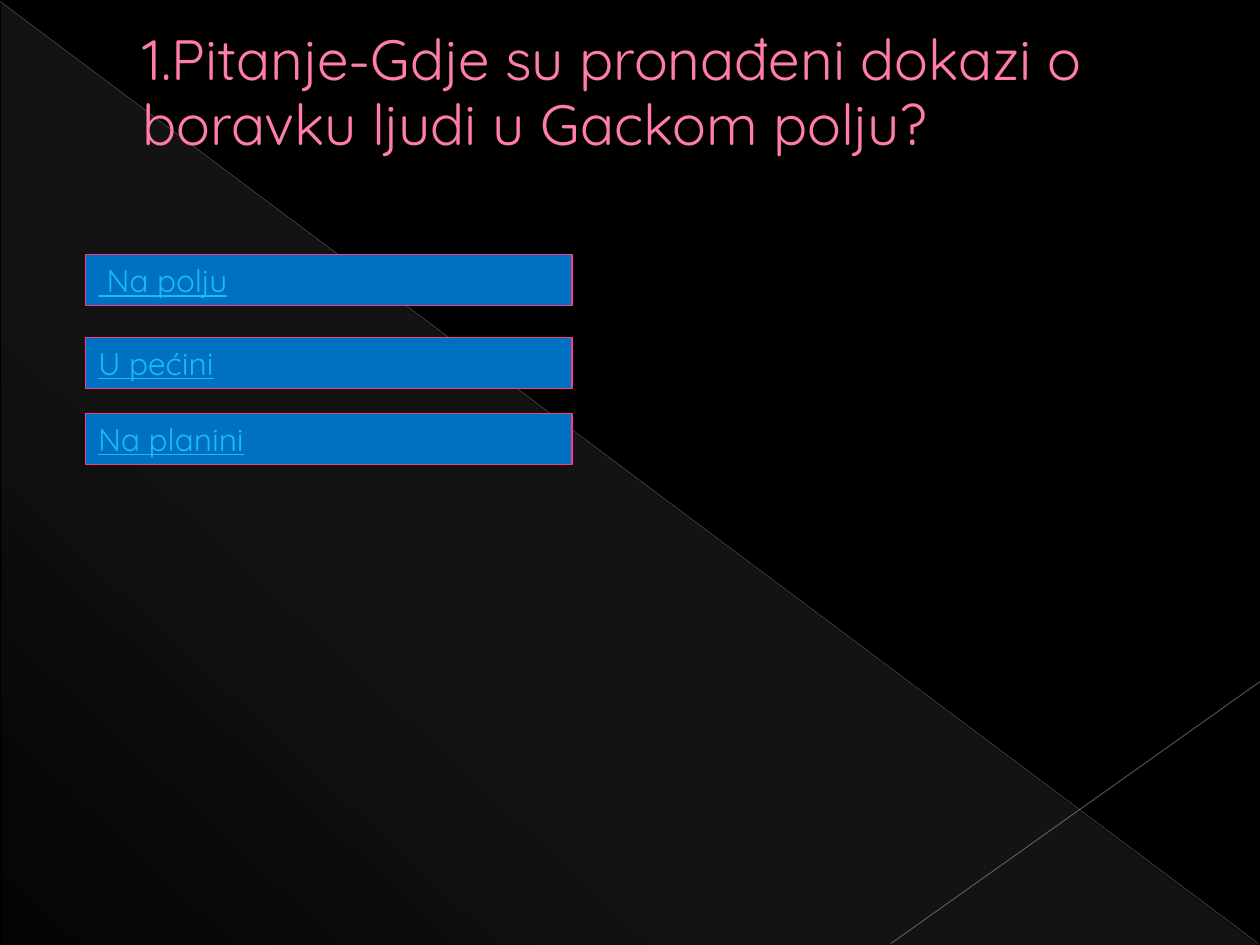
from lxml import etree
from pptx import Presentation
from pptx.dml.color import RGBColor
from pptx.enum.shapes import MSO_CONNECTOR as Connector, MSO_SHAPE as Shape
from pptx.enum.text import MSO_ANCHOR as Anchor, MSO_AUTO_SIZE as AutoSize, PP_ALIGN as Align
from pptx.oxml.ns import qn
from pptx.util import Cm, Pt

# Content
QUESTION = "1.Pitanje-Gdje su pronađeni dokazi o boravku ljudi u Gackom polju?"
ANSWERS = [(" Na polju", 5.13), ("U pećini", 6.8), ("Na planini", 8.33)]  # text, top in cm
# start, end, colour, width, opacity in percent
DIAGONALS = [
    ((0, 0.03), (25.37, 19.02), "BFBFBF", 0.39, 35),
    ((25.4, 13.74), (17.96, 19.02), "C6C6C6", 0.47, 45),
]
FADE_STOPS = [(0, 10), (70, 8), (100, 1)]  # position and opacity in percent

THEME = {
    "font": "Quicksand", "title_size": 32.4, "answer_size": 18,
    "background": "000000", "fade": "D2D2D2", "title": "FF7DA7",
    "answer": "17BBFD", "button": "0070C0", "border": "FF388C",
}


def rgb(name):
    return RGBColor.from_string(THEME.get(name, name))


def add_colour(parent, colour, opacity):
    node = etree.SubElement(parent, qn("a:srgbClr"), val=colour)
    etree.SubElement(node, qn("a:alpha"), val=str(opacity * 1000))


def write(frame, text, size, colour, underline=False, anchor=Anchor.MIDDLE, spacing=1.0):
    frame.word_wrap = True
    frame.vertical_anchor = anchor
    para = frame.paragraphs[0]
    para.alignment = Align.LEFT
    para.line_spacing = spacing
    span = para.add_run()
    span.text = text
    span.font.name = THEME["font"]
    span.font.size = Pt(THEME[size])
    span.font.color.rgb = rgb(colour)
    span.font.underline = underline


deck = Presentation()
deck.slide_width, deck.slide_height = Cm(25.4), Cm(19.05)
page = deck.slides.add_slide(deck.slide_layouts[5])
page.background.fill.solid()
page.background.fill.fore_color.rgb = rgb("background")

# Faded triangle
triangle = page.shapes.add_shape(Shape.RIGHT_TRIANGLE, Cm(0.03), Cm(0.05), Cm(25.35), Cm(19))
triangle.shadow.inherit = False
triangle.line.fill.background()
triangle.fill.gradient()
gradient = triangle._element.spPr.find(qn("a:gradFill"))
for child in list(gradient):
    gradient.remove(child)
stops = etree.SubElement(gradient, qn("a:gsLst"))
for position, opacity in FADE_STOPS:
    stop = etree.SubElement(stops, qn("a:gs"), pos=str(position * 1000))
    add_colour(stop, THEME["fade"], opacity)
etree.SubElement(gradient, qn("a:lin"), ang=str(133 * 60000), scaled="0")

# Diagonal lines
for start, end, colour, width, opacity in DIAGONALS:
    line = page.shapes.add_connector(Connector.STRAIGHT, *map(Cm, start + end))
    line.line.width = Pt(width)
    line.line.fill.solid()
    fill = line.line._ln.find(qn("a:solidFill"))
    for child in list(fill):
        fill.remove(child)
    add_colour(fill, colour, opacity)
    etree.SubElement(line._element.spPr, qn("a:effectLst"))

# Question, brought in front of the decoration
title = page.shapes.title
page.shapes._spTree.append(title._element)
title.left, title.top, title.width, title.height = Cm(1.27), Cm(0.56), Cm(22.86), Cm(3.89)
frame = title.text_frame
frame.auto_size = AutoSize.NONE
frame.margin_left, frame.margin_top = Cm(1.6), 0
write(frame, QUESTION, "title_size", "title", anchor=Anchor.TOP, spacing=0.96)

# Answer buttons
for text, top in ANSWERS:
    box = page.shapes.add_shape(Shape.RECTANGLE, Cm(1.73), Cm(top), Cm(9.8), Cm(1.03))
    box.shadow.inherit = False
    box.fill.solid()
    box.fill.fore_color.rgb = rgb("button")
    box.line.color.rgb = rgb("border")
    box.line.width = Pt(0.75)
    write(box.text_frame, text, "answer_size", "answer", underline=True)

deck.save("out.pptx")
